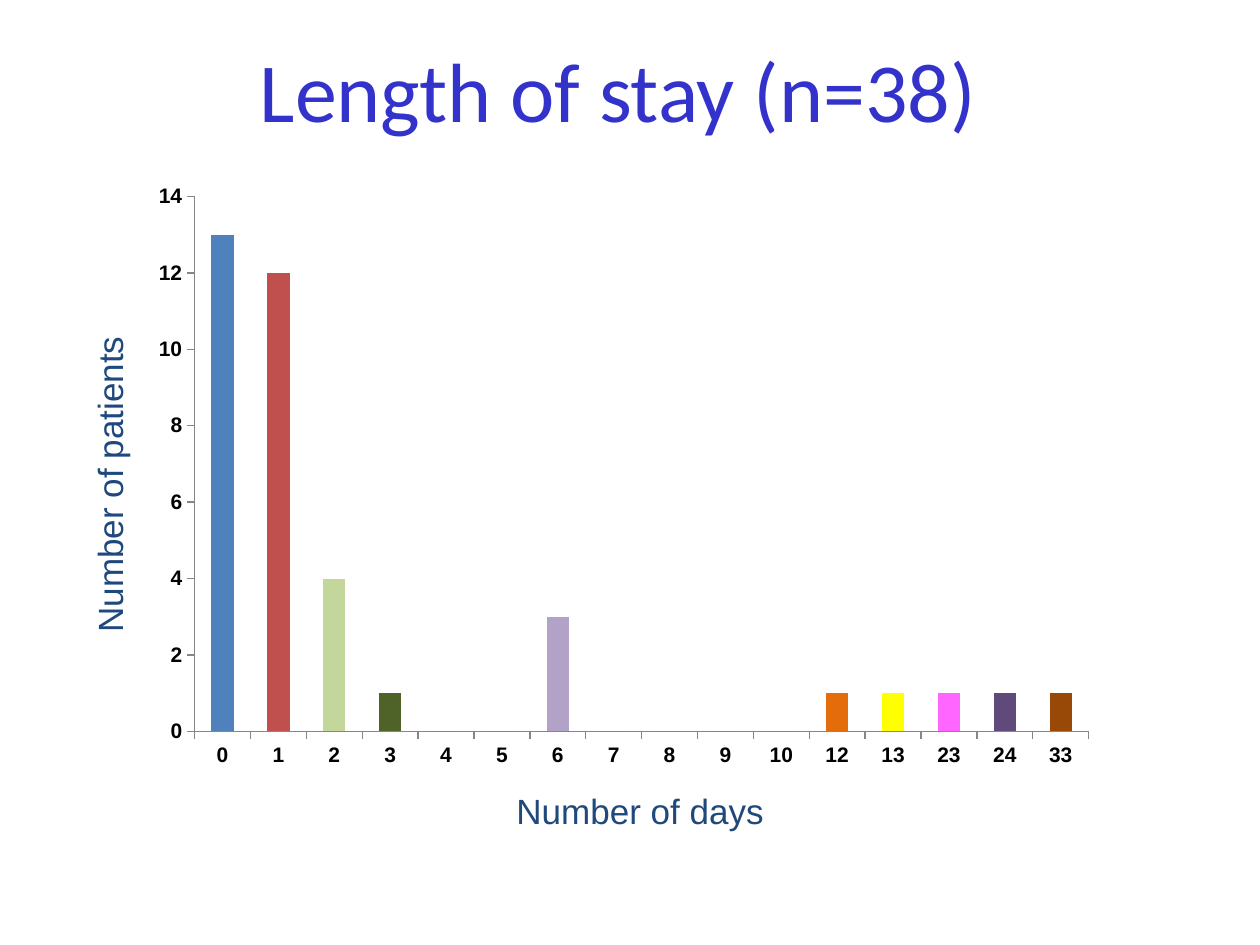
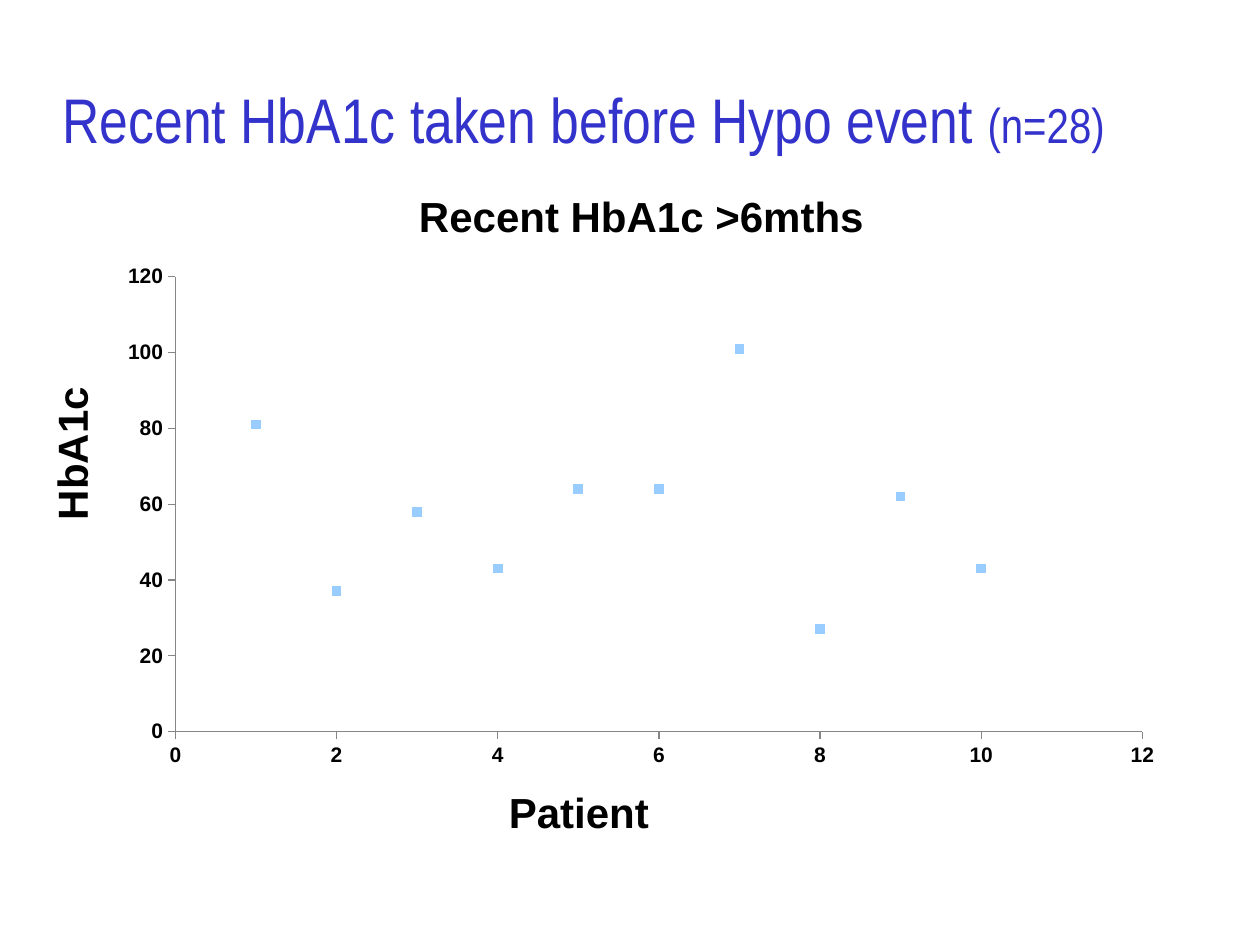
from lxml.etree import SubElement
from pptx import Presentation
from pptx.chart.data import CategoryChartData, XyChartData
from pptx.dml.color import RGBColor
from pptx.enum.chart import XL_CHART_TYPE as Chart, XL_MARKER_STYLE as Marker, XL_TICK_MARK as Tick
from pptx.enum.text import MSO_ANCHOR as Anchor, PP_ALIGN as Align
from pptx.oxml.ns import qn
from pptx.util import Inches, Pt

COLORS = dict(title="3333CC", label="1F497D", text="000000", axis="868686",
              bar="4F81BD", dot="99CCFF", back="FFFFFF")

DAYS = [0, 1, 2, 3, 4, 5, 6, 7, 8, 9, 10, 12, 13, 23, 24, 33]
PATIENTS_BY_DAYS = {0: 13, 1: 12, 2: 4, 3: 1, 6: 3, 12: 1, 13: 1, 23: 1, 24: 1, 33: 1}
BAR_COLORS = {1: "C0504D", 2: "C3D69B", 3: "4F6228", 6: "B3A2C7", 12: "E46C0A",
              13: "FFFF00", 23: "FF66FF", 24: "604A7B", 33: "984807"}
HBA1C = [81, 37, 58, 43, 64, 64, 101, 27, 62, 43]

# Text: box, runs as (text, size), font, colour, options
STAY_TEXTS = [
    ((1.73, 0.08, 6.35, 1.25), [("Length of stay (n=38)", 48)], "Calibri", "title",
     dict(anchor=Anchor.MIDDLE, align=Align.CENTER)),
    ((4, 6.22, 2.18, 0.44), [("Number of days", 20)], "Arial", "label", dict(wrap=False)),
    ((-0.57, 3.46, 2.88, 0.44), [("Number of patients", 20)], "Arial", "label",
     dict(rotation=270)),
]
HBA1C_TEXTS = [
    ((0.4, 0.35, 9.46, 0.94),
     [("Recent HbA1c taken before Hypo event ", 36), ("(n=28)", 28)],
     "Arial Narrow", "title", dict(anchor=Anchor.BOTTOM)),
    ((3.94, 6.19, 1.32, 0.51), [("Patient", 24)], "Arial", "text",
     dict(wrap=False, bold=True)),
    ((-0.07, 3.34, 1.27, 0.5), [("HbA1c", 24)], "Arial", "text",
     dict(wrap=False, bold=True, rotation=270)),
]


def rgb(value):
    return RGBColor.from_string(COLORS.get(value, value))


def style_font(font, name, size, color="text", bold=False):
    font.name, font.size, font.bold = name, Pt(size), bold
    font.color.rgb = rgb(color)


def add_slide(prs, texts):
    slide = prs.slides.add_slide(prs.slide_layouts[6])
    slide.background.fill.solid()
    slide.background.fill.fore_color.rgb = rgb("back")
    for box, runs, font, color, options in texts:
        add_text(slide, box, runs, font, color, **options)
    return slide


def add_text(slide, box, runs, font, color, anchor=Anchor.TOP, align=Align.LEFT,
             wrap=True, bold=False, rotation=0):
    s = slide.shapes.add_textbox(*map(Inches, box))
    s.rotation = rotation
    tf = s.text_frame
    tf.word_wrap, tf.vertical_anchor = wrap, anchor
    p = tf.paragraphs[0]
    p.alignment = align
    for text, size in runs:
        r = p.add_run()
        r.text = text
        style_font(r.font, font, size, color, bold)


def set_inner_plot(chart, shares):
    """Fix the plot inside the axes, as x, y, w, h shares of the chart."""
    area = chart.plots[0]._element.getparent()
    for old in area.findall(qn("c:layout")):
        area.remove(old)
    layout = SubElement(area, qn("c:layout"))
    area.insert(0, layout)
    manual = SubElement(layout, qn("c:manualLayout"))
    settings = [("layoutTarget", "inner"), ("xMode", "edge"), ("yMode", "edge"),
                *zip("xywh", shares)]
    for tag, value in settings:
        SubElement(manual, qn(f"c:{tag}")).set("val", str(value))


def add_chart(slide, kind, box, data, plot_shares, x_max=None, y_max=None, y_step=None):
    chart = slide.shapes.add_chart(kind, *map(Inches, box), data).chart
    style_font(chart.font, "Calibri", 10)
    chart.has_legend = chart.has_title = False
    chart.plots[0].vary_by_categories = False
    for axis in (chart.category_axis, chart.value_axis):
        axis.has_major_gridlines = False
        axis.major_tick_mark, axis.minor_tick_mark = Tick.OUTSIDE, Tick.NONE
        axis.format.line.color.rgb = rgb("axis")
        axis.format.line.width = Pt(0.75)
        style_font(axis.tick_labels.font, "Arial", 12, bold=True)
    y_axis = chart.value_axis
    y_axis.minimum_scale, y_axis.maximum_scale, y_axis.major_unit = 0, y_max, y_step
    if x_max:
        x_axis = chart.category_axis
        x_axis.minimum_scale, x_axis.maximum_scale, x_axis.major_unit = 0, x_max, 2
    set_inner_plot(chart, plot_shares)
    return chart


def build_stay(prs):
    slide = add_slide(prs, STAY_TEXTS)
    data = CategoryChartData()
    data.categories = [str(day) for day in DAYS]
    data.add_series("Series 1", [PATIENTS_BY_DAYS.get(day, 0) for day in DAYS])
    chart = add_chart(slide, Chart.COLUMN_CLUSTERED, (1.13, 1.37, 7.68, 4.89), data,
                      (0.054, 0.039, 0.924, 0.868), y_max=14, y_step=2)
    plot = chart.plots[0]
    plot.gap_width = 150
    series = plot.series[0]
    series.invert_if_negative = False
    fills = [(series, "bar")]
    fills += [(series.points[DAYS.index(day)], color) for day, color in BAR_COLORS.items()]
    for part, color in fills:
        part.format.fill.solid()
        part.format.fill.fore_color.rgb = rgb(color)


def build_hba1c(prs):
    slide = add_slide(prs, HBA1C_TEXTS)
    data = XyChartData()
    points = data.add_series("Series 1")
    for patient, value in enumerate(HBA1C, 1):
        points.add_data_point(patient, value)
    chart = add_chart(slide, Chart.XY_SCATTER, (0.85, 1.29, 8.48, 4.9), data,
                      (0.064, 0.185, 0.905, 0.737), x_max=12, y_max=120, y_step=20)
    chart.has_title = True
    chart.chart_title.include_in_layout = False
    r = chart.chart_title.text_frame.paragraphs[0].add_run()
    r.text = "Recent HbA1c >6mths"
    style_font(r.font, "Arial", 24, bold=True)
    series = chart.plots[0].series[0]
    series.format.line.fill.background()
    marker = series.marker
    marker.style, marker.size = Marker.SQUARE, 5
    marker.format.fill.solid()
    marker.format.fill.fore_color.rgb = rgb("dot")
    marker.format.line.color.rgb = rgb("dot")


def main():
    prs = Presentation()
    prs.slide_width, prs.slide_height = Inches(10), Inches(7.5)
    build_stay(prs)
    build_hba1c(prs)
    prs.save("out.pptx")


if __name__ == "__main__":
    main()
